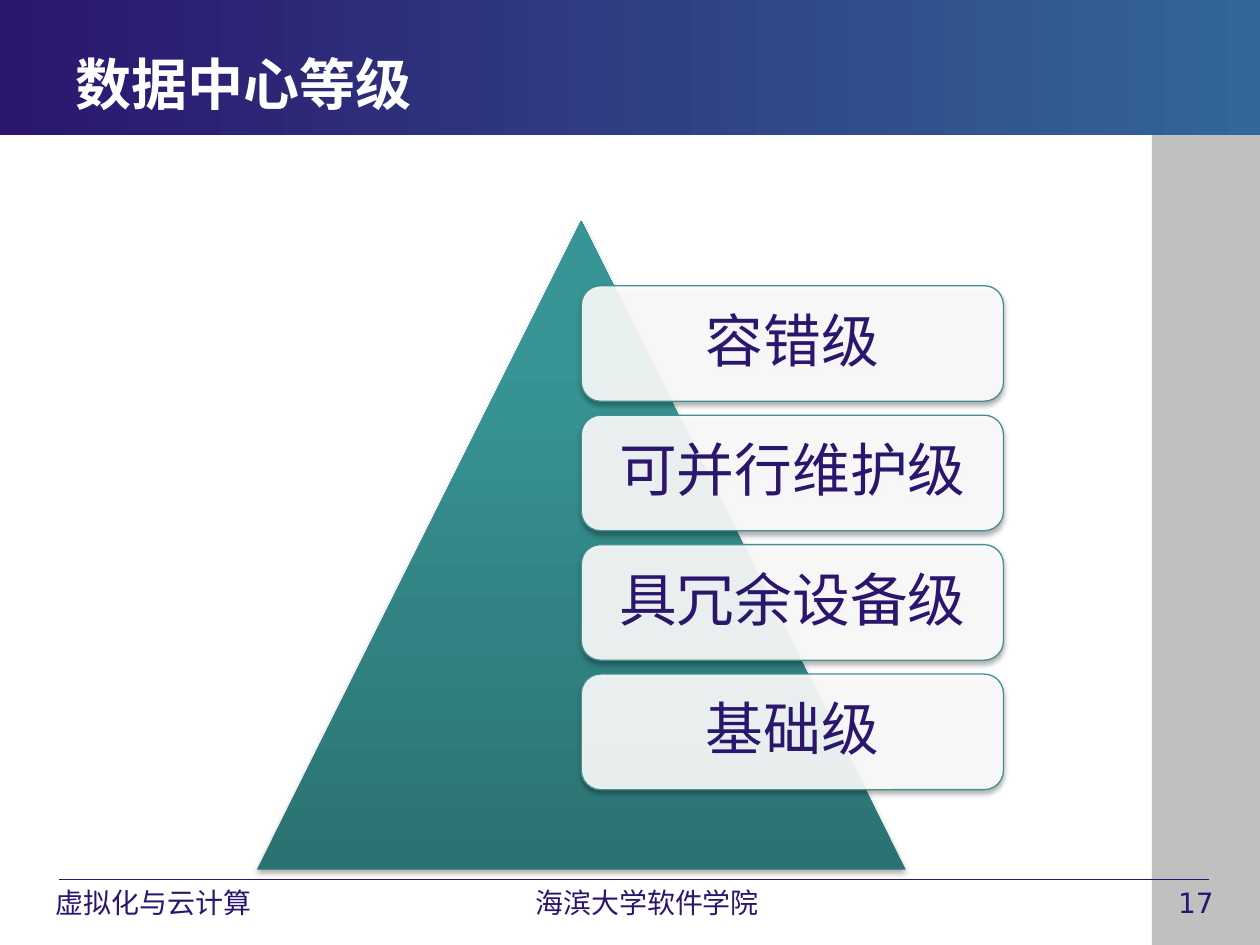
from lxml import etree
from pptx import Presentation
from pptx.dml.color import RGBColor
from pptx.enum.shapes import MSO_CONNECTOR, MSO_SHAPE
from pptx.enum.text import MSO_ANCHOR, PP_ALIGN
from pptx.oxml import parse_xml
from pptx.oxml.ns import qn
from pptx.util import Cm, Pt

RECT, TRIANGLE, ROUND = MSO_SHAPE.RECTANGLE, MSO_SHAPE.ISOSCELES_TRIANGLE, MSO_SHAPE.ROUNDED_RECTANGLE
STRAIGHT = MSO_CONNECTOR.STRAIGHT
LEFT, CENTER, MIDDLE = PP_ALIGN.LEFT, PP_ALIGN.CENTER, MSO_ANCHOR.MIDDLE
INDIGO = RGBColor(0x2B, 0x16, 0x6E)
BLUE = RGBColor(0x33, 0x66, 0x99)
GREY = RGBColor(0xC0, 0xC0, 0xC0)
WHITE = RGBColor(0xFF, 0xFF, 0xFF)
DARK_TEAL = RGBColor(0x2B, 0x73, 0x73)
TEAL = RGBColor(0x38, 0x95, 0x95)
EDGE = RGBColor(0x45, 0x8F, 0x8F)
FONT = "DejaVu Sans"
SHADOW = (
    '<a:outerShdw xmlns:a="http://schemas.openxmlformats.org/drawingml/2006/main" '
    'blurRad="40000" dist="23000" dir="5400000" rotWithShape="0">'
    '<a:srgbClr val="000000"><a:alpha val="35000"/></a:srgbClr></a:outerShdw>'
)


def add_shape(kind, x, y, w, h, shadow=False):
    sp = s.shapes.add_shape(kind, Cm(x), Cm(y), Cm(w), Cm(h))
    sp.line.fill.background()
    sp.shadow.inherit = False
    if shadow:
        sp._element.spPr.find(qn("a:effectLst")).append(parse_xml(SHADOW))
    return sp


def write(sp, text, size, color, align):
    p = sp.text_frame.paragraphs[0]
    p.text = text
    p.alignment = align
    p.font.name = FONT
    p.font.size = Pt(size)
    p.font.color.rgb = color
    return p


prs = Presentation()
prs.slide_width, prs.slide_height = Cm(25.4), Cm(19.05)
s = prs.slides.add_slide(prs.slide_layouts[5])

side = add_shape(RECT, 23.22, 2.72, 2.18, 16.33)
side.fill.solid()
side.fill.fore_color.rgb = GREY

rule = s.shapes.add_connector(STRAIGHT, Cm(1.19), Cm(17.73), Cm(24.38), Cm(17.73))
rule.line.color.rgb = INDIGO
rule.line.width = Pt(0.75)
etree.SubElement(rule._element.spPr, qn("a:effectLst"))

band = add_shape(RECT, 0, 0, 25.4, 2.72)
pyramid = add_shape(TRIANGLE, 5.18, 4.45, 13.08, 13.08, shadow=True)
for sp, angle, start, end, stop in (
    (band, 0, INDIGO, BLUE, 1),
    (pyramid, 90, DARK_TEAL, TEAL, 0.8),
):
    sp.fill.gradient()
    sp.fill.gradient_angle = angle
    first, last = sp.fill.gradient_stops
    first.color.rgb, first.position = start, 0
    last.color.rgb, last.position = end, stop

for text, x, w, align in (
    ("虚拟化与云计算", 0.63, 4.93, CENTER),
    ("海滨大学软件学院", 10.19, 5.72, CENTER),
    ("17", 23.5, 1.8, LEFT),
):
    box = s.shapes.add_textbox(Cm(x), Cm(17.73), Cm(w), Cm(0.89))
    box.text_frame.word_wrap = True
    write(box, text, 16, INDIGO, align)

title = s.shapes.title
title.left, title.top, title.width, title.height = Cm(1.27), Cm(0.89), Cm(17.15), Cm(1.57)
title.text_frame.vertical_anchor = MIDDLE
write(title, "数据中心等级", 32, WHITE, LEFT).font.bold = True
s.shapes._spTree.append(title._element)

for i, level in enumerate(("容错级", "可并行维护级", "具冗余设备级", "基础级")):
    card = add_shape(ROUND, 11.72, 5.76 + i * 2.61, 8.51, 2.33, shadow=True)
    card.fill.solid()
    card.fill.fore_color.rgb = WHITE
    color = card._element.spPr.find(qn("a:solidFill")).find(qn("a:srgbClr"))
    etree.SubElement(color, qn("a:alpha"), val="90000")
    card.line.color.rgb = EDGE
    card.line.width = Pt(0.75)
    tf = card.text_frame
    tf.word_wrap = True
    tf.vertical_anchor = MIDDLE
    tf.margin_left = tf.margin_right = tf.margin_top = tf.margin_bottom = Cm(0.36)
    p = write(card, level, 33, INDIGO, CENTER)
    p.line_spacing = 0.9
    p.space_after = Pt(11.5)

prs.save("out.pptx")
